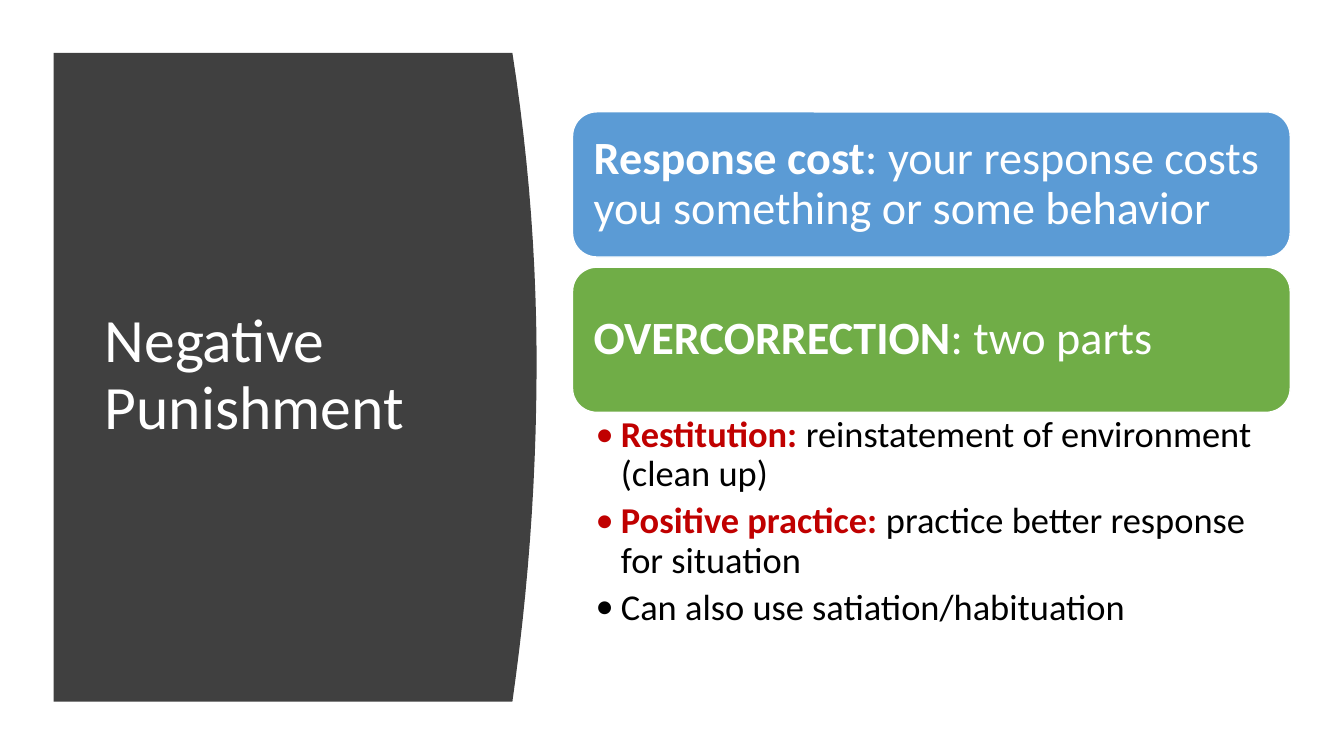
from dataclasses import dataclass

from lxml import etree
from pptx import Presentation
from pptx import util as u
from pptx.dml.color import RGBColor
from pptx.enum import shapes, text
from pptx.oxml import ns

WIDTH, HEIGHT = u.Inches(13.33), u.Inches(7.5)
FONT = "Calibri"
WHITE, BLACK, RED, CHARCOAL = "FFFFFF", "000000", "C00000", "404040"
CONTENT_LEFT, CONTENT_WIDTH = 42.6, 53.4
CARD_TOP, CARD_HEIGHT, CARD_PITCH = 14.8, 19.2, 20.55
CURVE_STEPS = 24


@dataclass
class Span:
    words: str
    color: str
    bold: bool = False


@dataclass
class Card:
    fill: str
    term: str
    meaning: str


CARDS = [
    Card("5B9BD5", "Response cost",
         ": your response costs you something or some behavior"),
    Card("70AD47", "OVERCORRECTION", ": two parts"),
]
POINTS = [
    [Span("Restitution: ", RED, True),
     Span("reinstatement of environment (clean up)", BLACK)],
    [Span("Positive practice: ", RED, True),
     Span("practice better response for situation", BLACK)],
    [Span("Can also use satiation/habituation", BLACK)],
]


def col(share: float) -> int:
    """Length in hundredths of the slide's width."""
    return round(WIDTH * share / 100)


def row(share: float) -> int:
    """Length in hundredths of the slide's height."""
    return round(HEIGHT * share / 100)


def paint(color_format, color: str) -> None:
    color_format.rgb = RGBColor.from_string(color)


def fill_shape(shape, color: str) -> None:
    shape.shadow.inherit = False
    shape.fill.solid()
    paint(shape.fill.fore_color, color)


def set_frame(frame, anchor, left: float, right: float, vertical: float) -> None:
    """Wrap and anchor a text frame, with insets in inches."""
    frame.word_wrap = True
    frame.vertical_anchor = anchor
    frame.margin_left, frame.margin_right = u.Inches(left), u.Inches(right)
    frame.margin_top = frame.margin_bottom = u.Inches(vertical)


def add_bullet(para) -> None:
    properties = para._p.get_or_add_pPr()
    properties.set("marL", str(u.Inches(0.25)))
    properties.set("indent", str(-u.Inches(0.25)))
    etree.SubElement(properties, ns.qn("a:buFont")).set("typeface", FONT)
    etree.SubElement(properties, ns.qn("a:buChar")).set("char", "•")


def write(para, spans: list[Span], size: float) -> None:
    para.alignment = text.PP_ALIGN.LEFT
    para.line_spacing = 0.9
    para.font.name, para.font.size = FONT, u.Pt(size)
    for span in spans:
        run = para.add_run()
        run.text = span.words
        run.font.bold = span.bold
        paint(run.font.color, span.color)


def add_panel(page) -> None:
    """Dark panel whose right edge is two half parabolas meeting at the bulge."""
    left, top, bottom = 4, 7, 92.8
    bulge_column, bulge_row, depth = 39.93, 48, 1.8
    edge = []
    for step in range(CURVE_STEPS + 1):
        y = top + (bottom - top) * step / CURVE_STEPS
        reach = bulge_row - top if y < bulge_row else bottom - bulge_row
        x = bulge_column - depth * ((y - bulge_row) / reach) ** 2
        edge.append((col(x), row(y)))
    builder = page.shapes.build_freeform(col(left), row(top))
    builder.add_line_segments(edge + [(col(left), row(bottom))], close=True)
    panel = builder.convert_to_shape()
    fill_shape(panel, CHARCOAL)
    panel.line.fill.background()


def add_title(page) -> None:
    box = page.shapes.add_textbox(col(7.05), row(14.8), col(28.05), row(69.87))
    set_frame(box.text_frame, text.MSO_ANCHOR.MIDDLE, 0.1, 0.1, 0.05)
    write(box.text_frame.paragraphs[0], [Span("Negative Punishment", WHITE)], 44)


def add_card(page, card: Card, top: float) -> None:
    box = page.shapes.add_shape(
        shapes.MSO_SHAPE.ROUNDED_RECTANGLE,
        col(CONTENT_LEFT), row(top), col(CONTENT_WIDTH), row(CARD_HEIGHT))
    fill_shape(box, card.fill)
    paint(box.line.color, WHITE)
    box.line.width = u.Pt(1)
    set_frame(box.text_frame, text.MSO_ANCHOR.MIDDLE, 0.14, 0.14, 0.14)
    spans = [Span(card.term, WHITE, True), Span(card.meaning, WHITE)]
    write(box.text_frame.paragraphs[0], spans, 33)


def add_points(page) -> None:
    box = page.shapes.add_textbox(
        col(CONTENT_LEFT), row(54.4), col(CONTENT_WIDTH), row(30.4))
    frame = box.text_frame
    set_frame(frame, text.MSO_ANCHOR.TOP, 0.23, 0.26, 0.05)
    for index, spans in enumerate(POINTS):
        para = frame.add_paragraph() if index else frame.paragraphs[0]
        para.level = 1
        add_bullet(para)
        para.space_after = u.Pt(5.5)
        write(para, spans, 26)


def main() -> None:
    deck = Presentation()
    deck.slide_width, deck.slide_height = WIDTH, HEIGHT
    page = deck.slides.add_slide(deck.slide_layouts[6])
    add_panel(page)
    add_title(page)
    for index, card in enumerate(CARDS):
        add_card(page, card, CARD_TOP + index * CARD_PITCH)
    add_points(page)
    deck.save("out.pptx")


if __name__ == "__main__":
    main()
